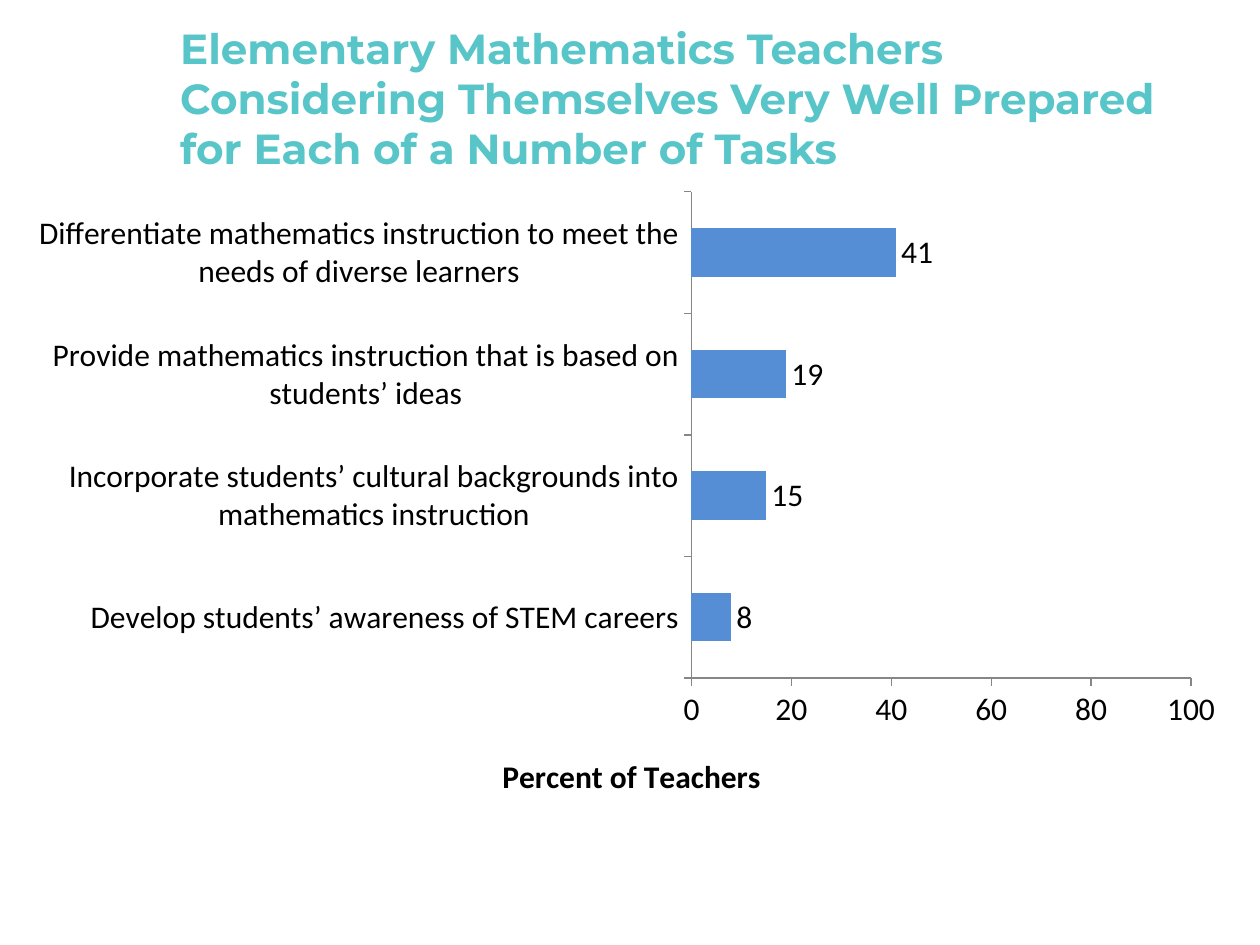
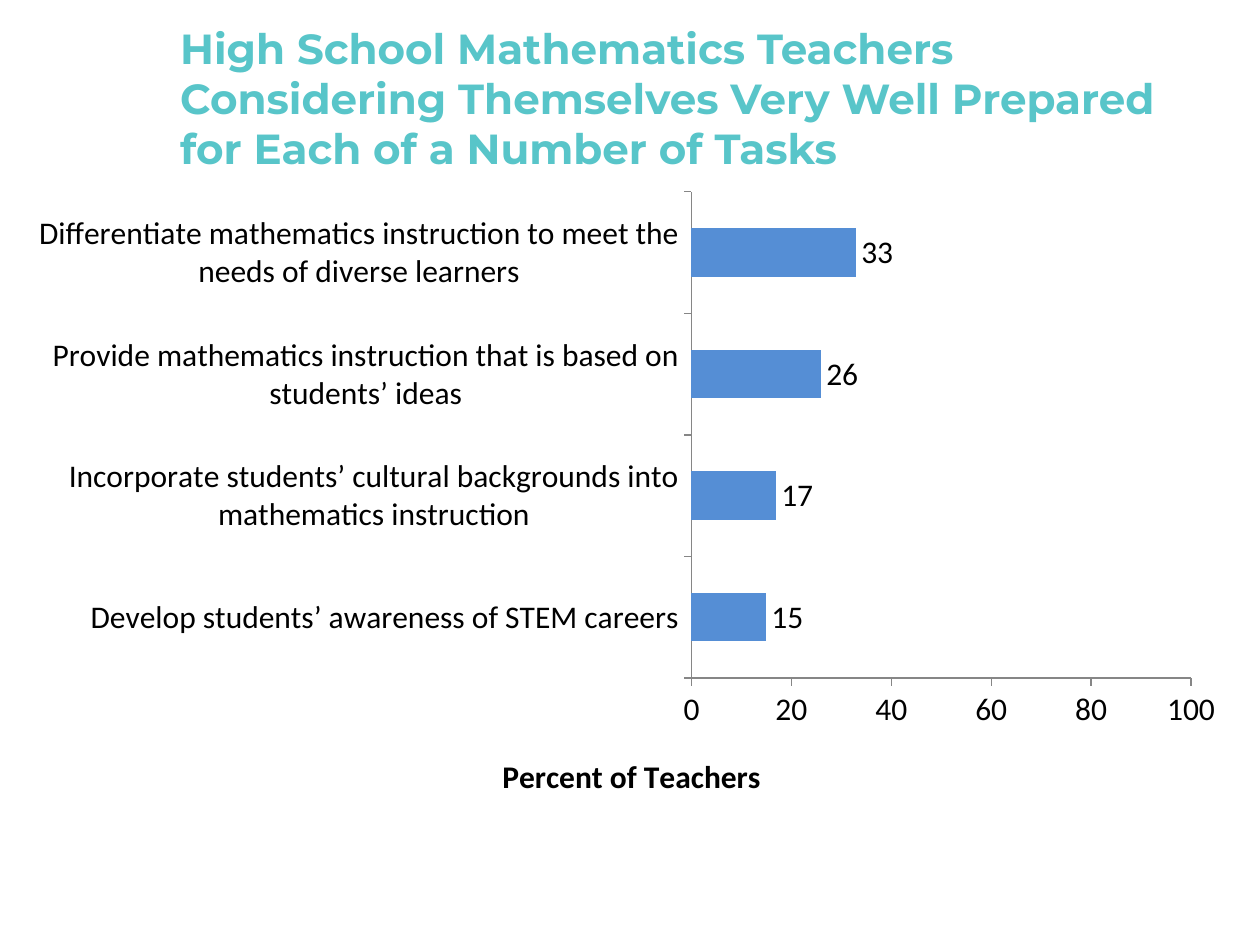
from lxml import etree
from pptx import Presentation
from pptx.chart.data import CategoryChartData
from pptx.dml.color import RGBColor
from pptx.enum.chart import XL_CHART_TYPE as ChartType
from pptx.enum.chart import XL_LABEL_POSITION as LabelPosition
from pptx.enum.chart import XL_TICK_MARK as TickMark
from pptx.enum.text import MSO_ANCHOR as Anchor
from pptx.enum.text import MSO_AUTO_SIZE as AutoSize
from pptx.enum.text import PP_ALIGN as Align
from pptx.oxml.ns import qn
from pptx.util import Inches, Pt

# Content: tasks run from the bottom bar to the top bar
TASKS = [
    "Develop students’ awareness of STEM careers",
    "Incorporate students’ cultural backgrounds into mathematics instruction",
    "Provide mathematics instruction that is based on students’ ideas",
    "Differentiate mathematics instruction to meet the needs of diverse learners",
]
TITLE_ENDING = ("Mathematics Teachers Considering Themselves Very Well Prepared "
                "for Each of a Number of Tasks")
PERCENTS_BY_LEVEL = {
    "Elementary": [8, 15, 19, 41],
    "High School": [15, 17, 26, 33],
}
AXIS_TITLE = "Percent of Teachers"

# Shared look
TEAL, BLUE, BLACK, GRAY = "58C5C9", "558ED5", "000000", "868686"
TITLE_FONT, CHART_FONT = "Montserrat", "Calibri"
TITLE_BOX = (1.33, 0.3, 8.17, 0.95)
CHART_BOX = (0.17, 1.42, 9.67, 5.08)
# Fractions of the chart box
PLOT_PLACE = {"x": 0.55, "y": 0.02, "w": 0.41, "h": 0.76}
AXIS_TITLE_PLACE = {"x": 0.39, "y": 0.89}


def color(hex_string):
    return RGBColor.from_string(hex_string)


def style_font(font, name, size, hex_string, bold=False):
    font.name = name
    font.size = Pt(size)
    font.bold = bold
    font.color.rgb = color(hex_string)


def place_in_chart(part, index, place, inner=False):
    """Give a chart part a fixed place, as its child number index."""
    for automatic in part.findall(qn("c:layout")):
        part.remove(automatic)
    layout = etree.Element(qn("c:layout"))
    manual = etree.SubElement(layout, qn("c:manualLayout"))
    settings = {"layoutTarget": "inner"} if inner else {}
    settings |= {"xMode": "edge", "yMode": "edge"} | place
    for tag, value in settings.items():
        etree.SubElement(manual, qn(f"c:{tag}")).set("val", str(value))
    part.insert(index, layout)


def add_title(slide, text):
    title = slide.shapes.title
    title.left, title.top, title.width, title.height = map(Inches, TITLE_BOX)
    frame = title.text_frame
    frame.text = text
    frame.word_wrap = True
    frame.auto_size = AutoSize.NONE
    frame.vertical_anchor = Anchor.MIDDLE
    heading = frame.paragraphs[0]
    heading.alignment = Align.LEFT
    style_font(heading.runs[0].font, TITLE_FONT, 24, TEAL, bold=True)


def style_axis(axis):
    axis.has_major_gridlines = False
    axis.major_tick_mark = TickMark.OUTSIDE
    axis.minor_tick_mark = TickMark.NONE
    axis.format.line.color.rgb = color(GRAY)
    axis.format.line.width = Pt(0.75)
    style_font(axis.tick_labels.font, CHART_FONT, 18, BLACK)


def add_percent_chart(slide, percents):
    data = CategoryChartData()
    data.categories = TASKS
    data.add_series("Series 1", percents)
    chart = slide.shapes.add_chart(
        ChartType.BAR_CLUSTERED, *map(Inches, CHART_BOX), data).chart
    chart.has_title = False
    chart.has_legend = False
    style_font(chart.font, CHART_FONT, 18, BLACK)

    # Bars and their values
    bars = chart.plots[0]
    bars.gap_width = 151
    bars.vary_by_categories = False
    fill = bars.series[0].format.fill
    fill.solid()
    fill.fore_color.rgb = color(BLUE)
    bars.has_data_labels = True
    labels = bars.data_labels
    labels.show_value = True
    labels.position = LabelPosition.OUTSIDE_END
    style_font(labels.font, CHART_FONT, 18, BLACK)

    # Axes
    percent_axis = chart.value_axis
    for axis in (chart.category_axis, percent_axis):
        style_axis(axis)
    percent_axis.minimum_scale = 0
    percent_axis.maximum_scale = 100
    percent_axis.major_unit = 20
    axis_title = percent_axis.axis_title
    axis_title.text_frame.text = AXIS_TITLE
    style_font(axis_title.text_frame.paragraphs[0].runs[0].font,
               CHART_FONT, 18, BLACK, bold=True)

    # The axis title is centred under the whole chart
    plot_area = chart.element.find(".//" + qn("c:plotArea"))
    place_in_chart(plot_area, 0, PLOT_PLACE, inner=True)
    place_in_chart(plot_area.find(".//" + qn("c:title")), 1, AXIS_TITLE_PLACE)


def main():
    deck = Presentation()
    deck.slide_width, deck.slide_height = Inches(10), Inches(7.5)
    title_only = deck.slide_layouts[5]
    for level, percents in PERCENTS_BY_LEVEL.items():
        slide = deck.slides.add_slide(title_only)
        add_title(slide, f"{level} {TITLE_ENDING}")
        add_percent_chart(slide, percents)
    deck.save("out.pptx")


if __name__ == "__main__":
    main()
